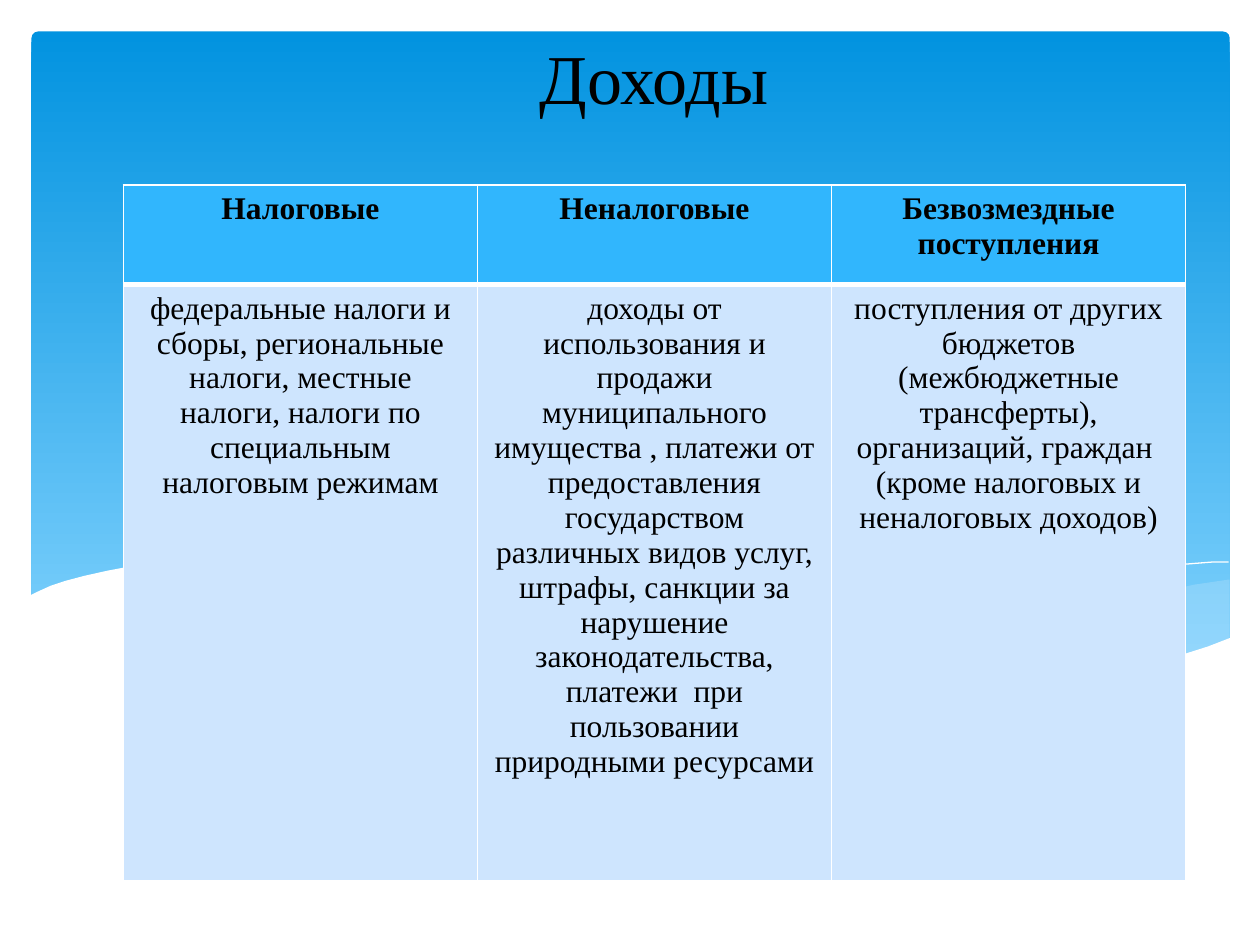
import lxml.etree
import pptx
import pptx.dml.color
import pptx.enum.shapes
import pptx.enum.text
import pptx.oxml.ns
import pptx.util

PX = 9144  # 100 px to the inch
FONT = "Times New Roman"
CENTER = pptx.enum.text.PP_ALIGN.CENTER
qn = pptx.oxml.ns.qn


def rgb(value):
    return pptx.dml.color.RGBColor.from_string(value)


def format_text(frame, size, bold=False):
    para = frame.paragraphs[0]
    para.alignment = CENTER
    for span in para.runs:
        span.font.name = FONT
        span.font.size = pptx.util.Pt(size)
        span.font.bold = bold
        span.font.color.rgb = rgb("000000")


deck = pptx.Presentation()
deck.slide_width, deck.slide_height = 1000 * PX, 750 * PX
page = deck.slides.add_slide(deck.slide_layouts[6])

# Blue backdrop
backdrop = page.shapes.add_shape(
    pptx.enum.shapes.MSO_SHAPE.ROUNDED_RECTANGLE, 25 * PX, 25 * PX, 951 * PX, 518 * PX)
backdrop.adjustments[0] = 0.01
backdrop.shadow.inherit = False
backdrop.line.fill.background()
backdrop.fill.gradient()
backdrop.fill.gradient_angle = 270
for stop, color in zip(backdrop.fill.gradient_stops, ("0293E0", "83D3FE")):
    stop.color.rgb = rgb(color)

# Waves: fill colour (None for an open white line), opacity in percent, points in px
right_wave = [
    (975, 460), (948, 464), (921, 470), (891, 476), (861, 483), (805, 497), (753, 508),
    (706, 518), (661, 525), (691, 530), (719, 533), (745, 535), (769, 537), (803, 538),
    (835, 537), (863, 535), (889, 532), (913, 527), (935, 522), (949, 517), (963, 512),
    (976, 507), (976, 460)]
middle_wave = [
    (893, 533), (866, 529), (807, 520), (741, 508), (668, 491), (598, 474), (555, 465),
    (514, 458), (465, 451), (420, 447), (380, 446), (328, 447), (286, 452), (323, 456),
    (362, 463), (404, 471), (449, 482), (530, 501), (601, 515), (665, 526), (722, 534),
    (773, 538), (807, 539), (848, 538), (876, 535)]
long_line = [
    (309, 456), (328, 452), (353, 449), (387, 448), (433, 447), (469, 449), (510, 452),
    (556, 457), (608, 464), (665, 473), (727, 486), (795, 502), (869, 521), (907, 532)]
short_line = [
    (613, 517), (653, 506), (695, 496), (748, 483), (806, 470), (866, 459), (910, 452),
    (938, 448), (963, 446), (975, 446)]
white_wave = [
    (977, 506), (959, 513), (940, 519), (920, 525), (899, 530), (875, 533), (837, 536),
    (793, 537), (744, 534), (688, 528), (626, 519), (579, 510), (529, 499), (475, 487),
    (418, 473), (365, 462), (316, 454), (271, 448), (230, 445), (193, 444), (161, 444),
    (132, 446), (106, 449), (85, 453), (67, 457), (52, 461), (40, 465), (29, 470),
    (23, 473), (23, 589), (977, 589)]
waves = [
    ("C6E7FC", 29, right_wave),
    ("C6E7FC", 40, middle_wave),
    (None, 100, long_line),
    (None, 100, short_line),
    ("FFFFFF", 100, white_wave),
]
for color, opacity, points in waves:
    builder = page.shapes.build_freeform(*points[0], scale=PX)
    builder.add_line_segments(points[1:], close=color is not None)
    wave = builder.convert_to_shape()
    wave.shadow.inherit = False
    if color is None:
        wave.fill.background()
        wave.line.color.rgb = rgb("FFFFFF")
        wave.line.width = 0
        continue
    wave.line.fill.background()
    wave.fill.solid()
    wave.fill.fore_color.rgb = rgb(color)
    if opacity < 100:
        tone = wave.fill._xPr.find(".//" + qn("a:srgbClr"))
        lxml.etree.SubElement(tone, qn("a:alpha"), val=str(opacity * 1000))

# Title
title = page.shapes.add_textbox(98 * PX, 21 * PX, 842 * PX, 79 * PX)
title.text_frame.word_wrap = True
title.text_frame.vertical_anchor = pptx.enum.text.MSO_ANCHOR.MIDDLE
title.text_frame.text = "Доходы"
format_text(title.text_frame, 40)

# Income table
income = [
    ["Налоговые", "Неналоговые", "Безвозмездные поступления"],
    ["федеральные налоги и сборы, региональные налоги, местные налоги, "
     "налоги по специальным налоговым режимам",
     "доходы от использования и продажи муниципального имущества , платежи от "
     "предоставления государством различных видов услуг, штрафы, санкции за нарушение "
     "законодательства, платежи  при пользовании природными ресурсами",
     "поступления от других бюджетов (межбюджетные трансферты), организаций, граждан  "
     "(кроме налоговых и неналоговых доходов)"],
]
row_heights = (79, 473)
row_fills = ("31B6FD", "CEE5FE")
table = page.shapes.add_table(2, 3, 98 * PX, 147 * PX, 843 * PX, sum(row_heights) * PX).table
table.first_row = table.horz_banding = False
for column in table.columns:
    column.width = 281 * PX
for row, height in zip(table.rows, row_heights):
    row.height = height * PX

for r, texts in enumerate(income):
    for c, text in enumerate(texts):
        cell = table.cell(r, c)
        cell.text = text
        format_text(cell.text_frame, 18, bold=r == 0)
        properties = cell._tc.get_or_add_tcPr()
        for side in ("lnL", "lnR", "lnT", "lnB"):
            # The rule between header and body is three points wide
            thick = (r, side) in ((0, "lnB"), (1, "lnT"))
            border = lxml.etree.SubElement(
                properties, qn("a:" + side), w=str(pptx.util.Pt(3 if thick else 1)))
            paint = lxml.etree.SubElement(border, qn("a:solidFill"))
            lxml.etree.SubElement(paint, qn("a:srgbClr"), val="FFFFFF")
        cell.fill.solid()
        cell.fill.fore_color.rgb = rgb(row_fills[r])

deck.save("out.pptx")
